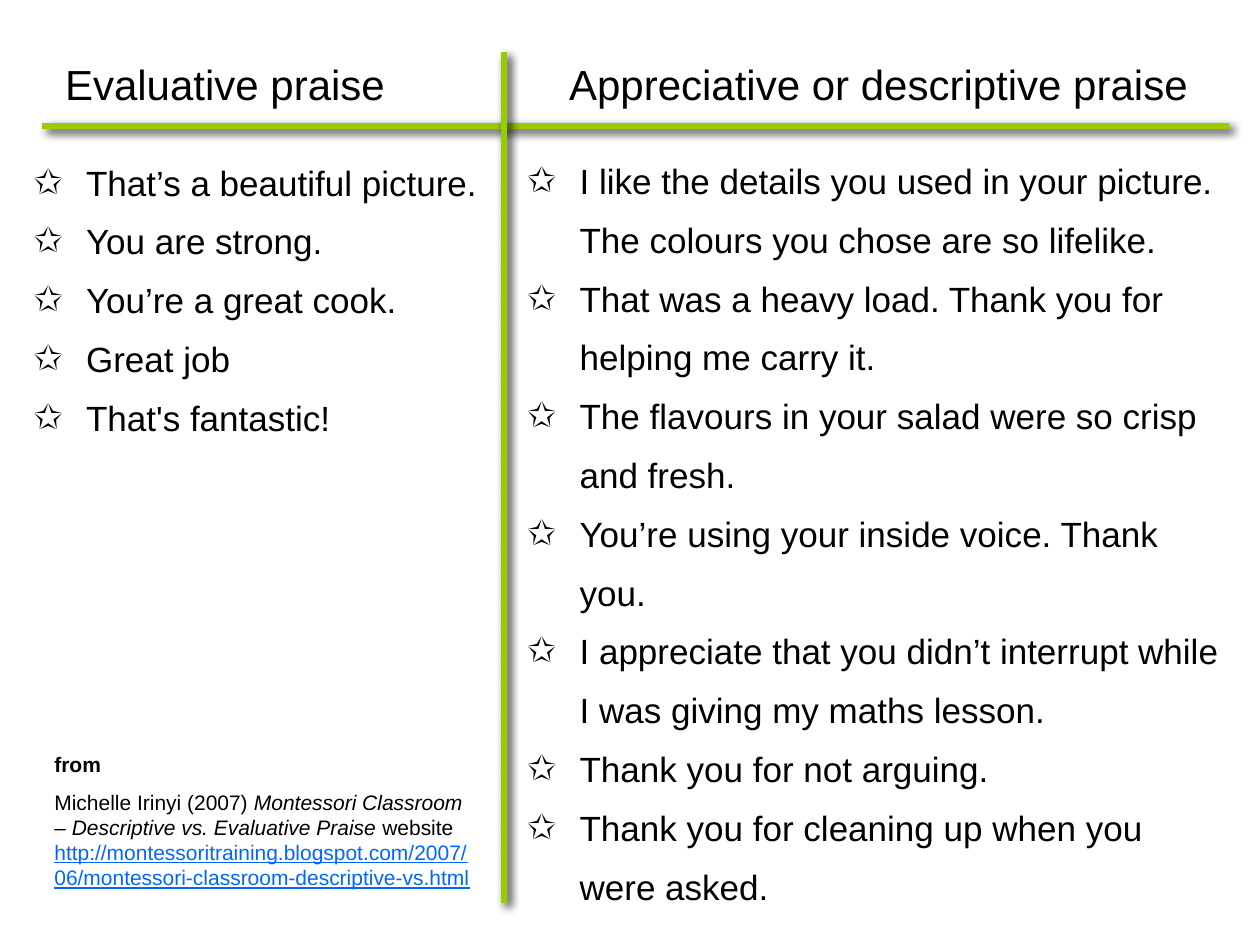
"""Build a slide that compares evaluative praise with descriptive praise."""
import pptx
import pptx.dml.color
import pptx.enum.shapes
import pptx.enum.text
import pptx.oxml
import pptx.oxml.ns
import pptx.util

Pt = pptx.util.Pt
FONT, BLACK, GREEN, BLUE = "Arial", "000000", "99CC00", "0066FF"
BULLET, INDENT = "✩", 30

EVALUATIVE = [
    "That’s a beautiful picture.",
    "You are strong.",
    "You’re a great cook.",
    "Great job",
    "That's fantastic!",
]
DESCRIPTIVE = [
    "I like the details you used in your picture. The colours you chose are so lifelike.",
    "That was a heavy load. Thank you for helping me carry it.",
    "The flavours in your salad were so crisp and fresh.",
    "You’re using your inside voice. Thank you.",
    "I appreciate that you didn’t interrupt while I was giving my maths lesson.",
    "Thank you for not arguing.",
    "Thank you for cleaning up when you were asked.",
]
HEADINGS = {
    1: ("Evaluative praise", (30, 30, 197.5, 36)),
    3: ("Appreciative or descriptive praise", (318, 30, 372, 36)),
}
LISTS = {
    2: (EVALUATIVE, 1, (12, 88.5, 270, 199.5)),
    4: (DESCRIPTIVE, 1.4, (294, 78, 414, 488)),
}
RULES = [(24, 72, 702, 72), (288, 30, 288, 516)]
SOURCE_BOX = (24, 426, 252, 101.5)
SOURCE = [
    [("from", {"bold": True})],
    [
        ("Michelle Irinyi (2007) ", {}),
        ("Montessori Classroom – Descriptive vs. Evaluative Praise", {"italic": True}),
        (" website ", {}),
        ("http://montessoritraining.blogspot.com/2007/06/montessori-classroom-descriptive-vs.html",
         {"color": BLUE, "underline": True}),
    ],
]
SHADOW = (
    f'<a:effectLst {pptx.oxml.ns.nsdecls("a")}>'
    f'<a:outerShdw blurRad="{Pt(5)}" dist="{Pt(3)}" dir="2700000" algn="ctr" rotWithShape="0">'
    f'<a:srgbClr val="{BLACK}"><a:alpha val="75000"/></a:srgbClr></a:outerShdw></a:effectLst>'
)


def rgb(value):
    return pptx.dml.color.RGBColor.from_string(value)


def place(shape, box, wrap=True):
    shape.left, shape.top, shape.width, shape.height = map(Pt, box)
    frame = shape.text_frame
    frame.word_wrap = wrap
    frame.auto_size = pptx.enum.text.MSO_AUTO_SIZE.SHAPE_TO_FIT_TEXT
    frame.vertical_anchor = pptx.enum.text.MSO_ANCHOR.TOP
    return frame


def add_paragraph(frame, index, spacing=1, before=0):
    paragraph = frame.add_paragraph() if index else frame.paragraphs[0]
    paragraph.line_spacing = spacing
    paragraph.space_before = Pt(before if index else 0)
    return paragraph


def add_run(paragraph, text, size, color=BLACK, bold=False, italic=False, underline=False):
    run = paragraph.add_run()
    run.text = text
    font = run.font
    font.name, font.size = FONT, Pt(size)
    font.bold, font.italic, font.underline = bold, italic, underline
    font.color.rgb = rgb(color)


def add_bullet(paragraph):
    properties = paragraph._p.get_or_add_pPr()
    properties.set("marL", str(Pt(INDENT)))
    properties.set("indent", str(-Pt(INDENT)))
    properties.append(pptx.oxml.parse_xml(
        f'<a:buChar {pptx.oxml.ns.nsdecls("a")} char="{BULLET}"/>'))


def add_rule(slide, ends):
    line = slide.shapes.add_connector(
        pptx.enum.shapes.MSO_CONNECTOR.STRAIGHT, *map(Pt, ends))
    line.line.color.rgb = rgb(GREEN)
    line.line.width = Pt(4)
    line._element.spPr.append(pptx.oxml.parse_xml(SHADOW))


def main():
    presentation = pptx.Presentation()
    presentation.slide_width, presentation.slide_height = Pt(720), Pt(540)
    slide = presentation.slides.add_slide(presentation.slide_layouts.get_by_name("Comparison"))
    title = slide.shapes.title._element
    title.getparent().remove(title)
    holders = {holder.placeholder_format.idx: holder for holder in slide.placeholders}

    for key, (text, box) in HEADINGS.items():
        add_run(add_paragraph(place(holders[key], box, wrap=False), 0), text, 24)

    for key, (items, first_spacing, box) in LISTS.items():
        frame = place(holders[key], box)
        for index, text in enumerate(items):
            paragraph = add_paragraph(frame, index, 1.4 if index else first_spacing)
            add_bullet(paragraph)
            add_run(paragraph, text, 20)

    for ends in RULES:
        add_rule(slide, ends)

    frame = place(slide.shapes.add_textbox(*map(Pt, SOURCE_BOX)), SOURCE_BOX)
    for index, runs in enumerate(SOURCE):
        paragraph = add_paragraph(frame, index, before=7)
        for text, style in runs:
            add_run(paragraph, text, 12, **style)

    presentation.save("out.pptx")


if __name__ == "__main__":
    main()
